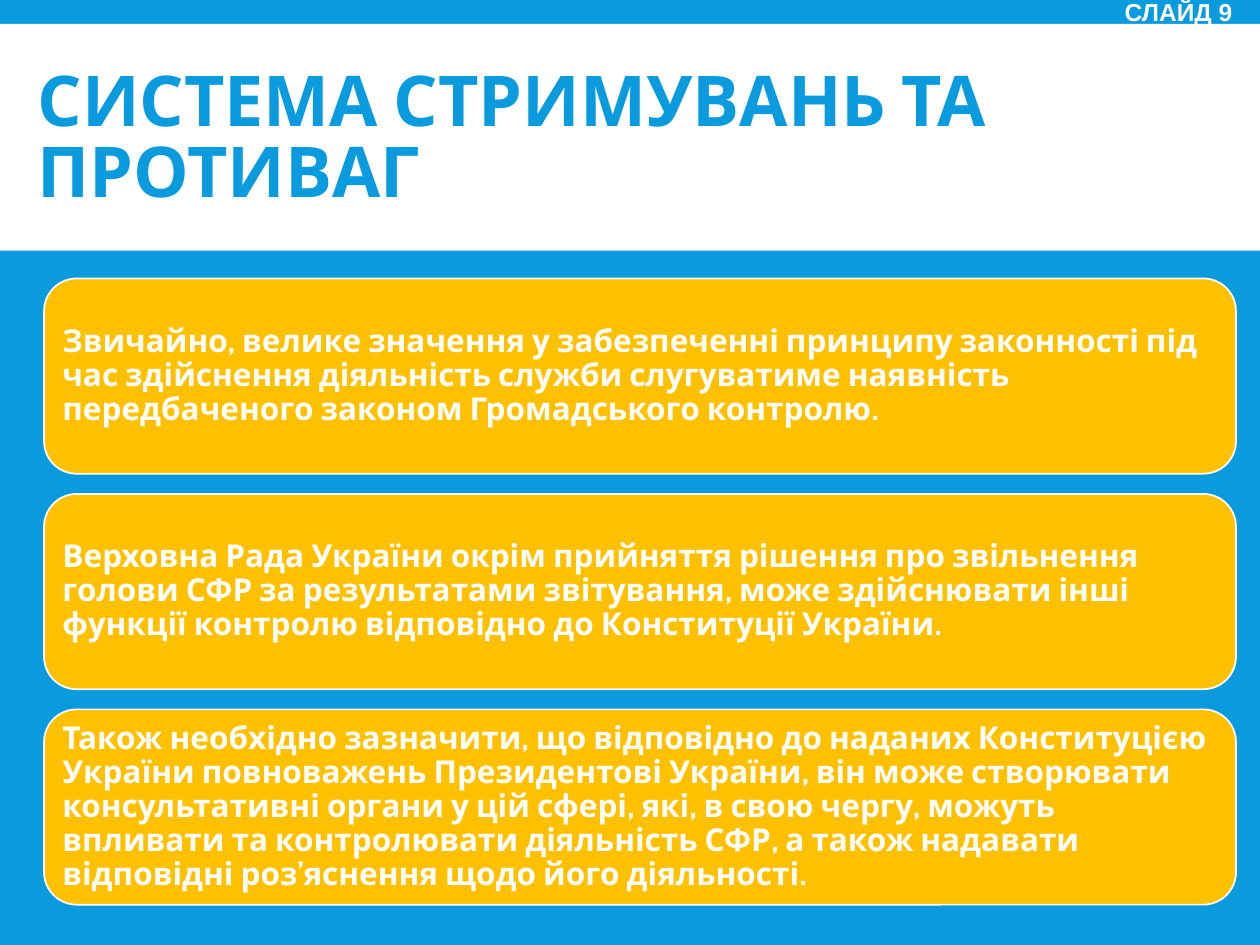
import pptx
import pptx.util
import pptx.dml.color
import pptx.enum.shapes
import pptx.enum.text

Inches = pptx.util.Inches
Pt = pptx.util.Pt
RGBColor = pptx.dml.color.RGBColor
MSO_SHAPE = pptx.enum.shapes.MSO_SHAPE
PP_ALIGN = pptx.enum.text.PP_ALIGN
MSO_ANCHOR = pptx.enum.text.MSO_ANCHOR

BLUE = RGBColor(0x09, 0x9B, 0xDD)
GOLD = RGBColor(0xFF, 0xC0, 0x00)
WHITE = RGBColor(0xFF, 0xFF, 0xFF)

CARDS = [
    "Звичайно, велике значення у забезпеченні принципу законності під час "
    "здійснення діяльність служби слугуватиме наявність передбаченого законом "
    "Громадського контролю.",
    "Верховна Рада України окрім прийняття рішення про звільнення голови СФР "
    "за результатами звітування, може здійснювати інші функції контролю "
    "відповідно до Конституції України.",
    "Також необхідно зазначити, що відповідно до наданих Конституцією України "
    "повноважень Президентові України, він може створювати консультативні "
    "органи у цій сфері, які, в свою чергу, можуть впливати та контролювати "
    "діяльність СФР, а також надавати відповідні роз’яснення щодо його "
    "діяльності.",
]


def write(shape, text, size, color, font="Cabin", align=PP_ALIGN.LEFT, space=0.85):
    frame = shape.text_frame
    frame.text = text
    frame.word_wrap = True
    frame.auto_size = pptx.enum.text.MSO_AUTO_SIZE.NONE
    frame.vertical_anchor = MSO_ANCHOR.MIDDLE
    para = frame.paragraphs[0]
    para.alignment = align
    para.line_spacing = space
    face = para.runs[0].font
    face.name = font
    face.size = Pt(size)
    face.bold = True
    face.color.rgb = color


def add_box(slide, kind, box, fill):
    shape = slide.shapes.add_shape(kind, *box)
    shape.shadow.inherit = False
    shape.fill.solid()
    shape.fill.fore_color.rgb = fill
    return shape


def add_head(slide, box):
    left, top, width, height = box
    band = add_box(slide, MSO_SHAPE.RECTANGLE, box, WHITE)
    band.line.fill.background()
    title = slide.shapes.title
    title.element.addprevious(band.element)
    title.left, title.top = left + Inches(0.2), top + Inches(0.1)
    title.width, title.height = width - Inches(0.24), height - Inches(0.15)
    write(title, "СИСТЕМА СТРИМУВАНЬ ТА ПРОТИВАГ", 40, BLUE)


def add_cards(slide, box, texts):
    left, top, width, height = box
    gap = Inches(0.16)
    tall = (height - gap * (len(texts) - 1)) // len(texts)
    for row, text in enumerate(texts):
        place = (left, top + row * (tall + gap), width, tall)
        card = add_box(slide, MSO_SHAPE.ROUNDED_RECTANGLE, place, GOLD)
        card.line.color.rgb = WHITE
        card.line.width = Pt(1)
        frame = card.text_frame
        frame.margin_left = frame.margin_right = Inches(0.07)
        frame.margin_top = frame.margin_bottom = Inches(0.07)
        write(card, text, 18, WHITE, space=0.9)


def add_label(slide, box):
    label = slide.shapes.add_textbox(*box)
    write(label, "СЛАЙД 9", 14, WHITE, "Arial", PP_ALIGN.RIGHT)


def main():
    deck = pptx.Presentation()
    deck.slide_width, deck.slide_height = Inches(10), Inches(7.5)
    slide = deck.slides.add_slide(deck.slide_layouts[5])
    slide.background.fill.solid()
    slide.background.fill.fore_color.rgb = BLUE
    add_head(slide, (Inches(0), Inches(0.19), Inches(10), Inches(1.8)))
    add_cards(slide, (Inches(0.35), Inches(2.21), Inches(9.46), Inches(4.97)), CARDS)
    add_label(slide, (Inches(8.3), Inches(-0.15), Inches(1.58), Inches(0.52)))
    deck.save("out.pptx")


if __name__ == "__main__":
    main()
